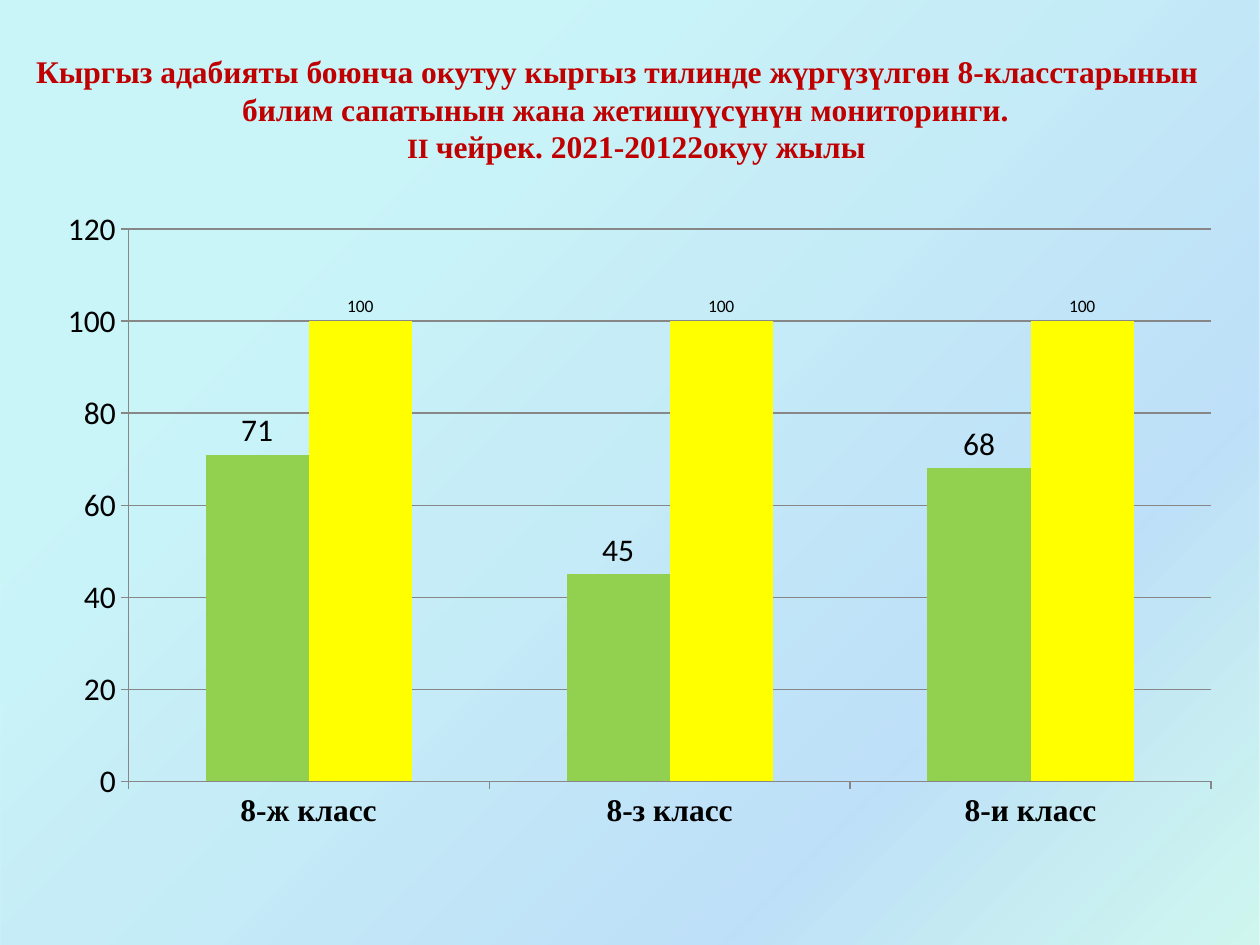
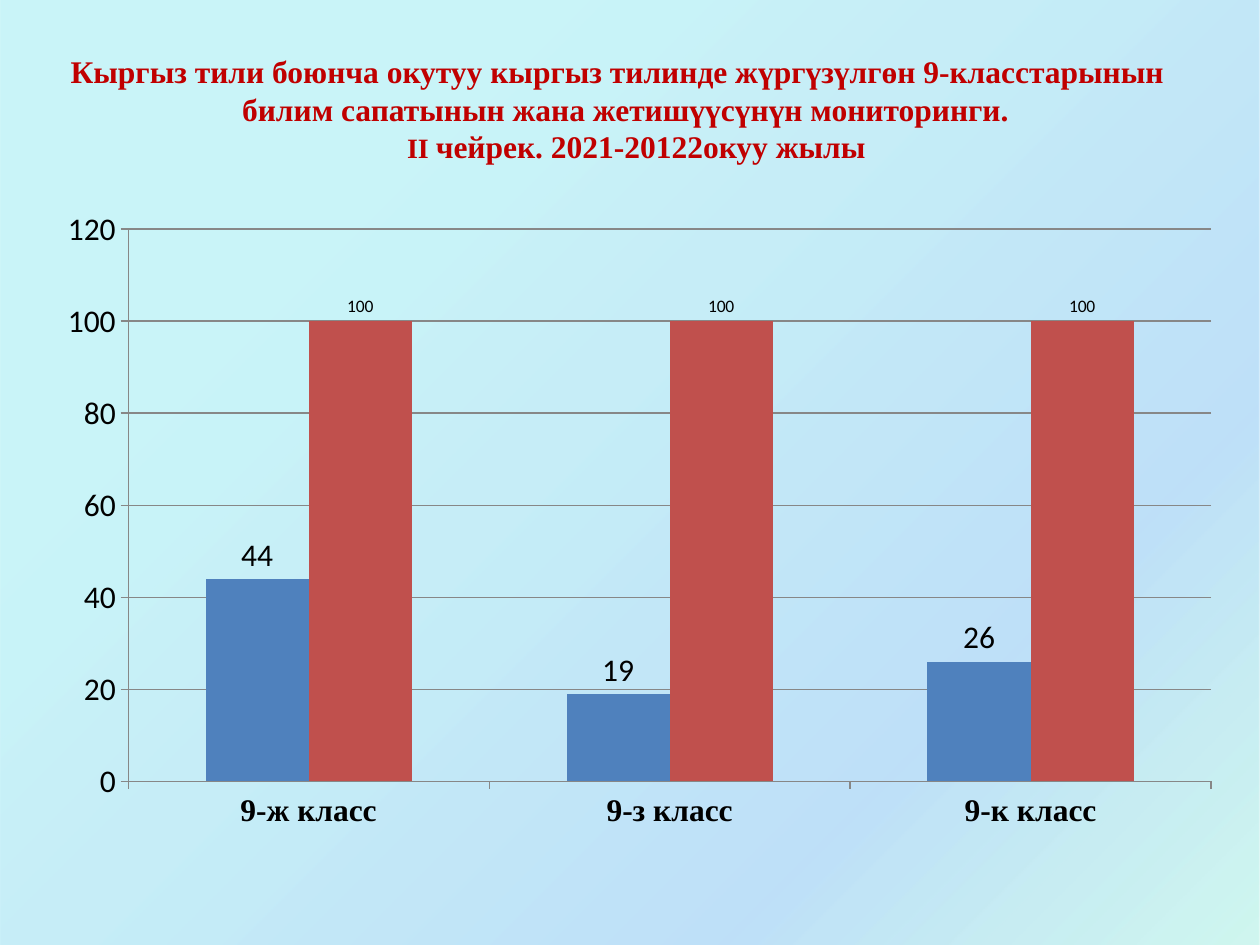
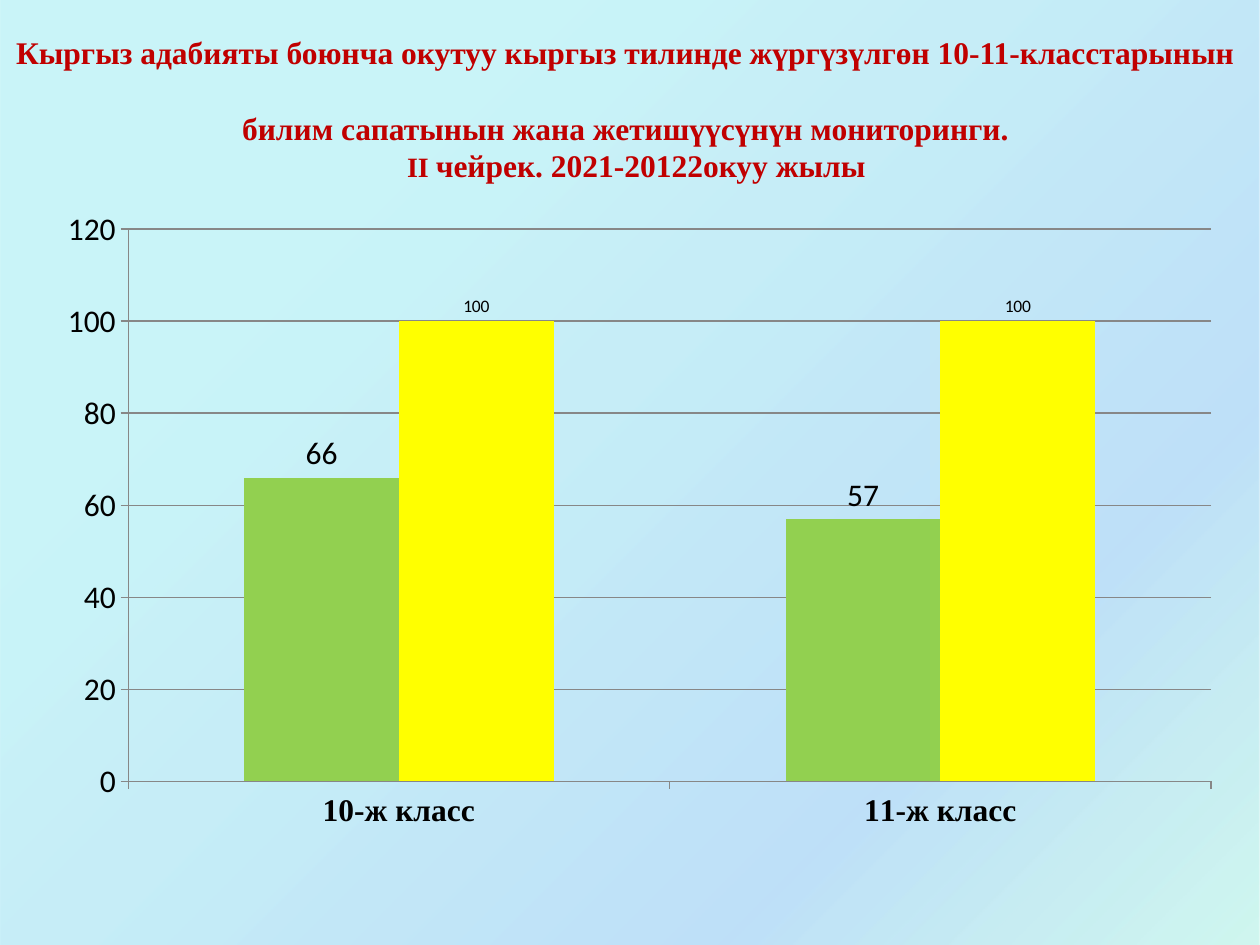
from lxml import etree
from pptx import Presentation
from pptx import util as u
from pptx.chart.data import CategoryChartData
from pptx.dml.color import RGBColor
from pptx.enum import chart as ch, shapes, text
from pptx.oxml import ns

SCALE = 914400 / 126
WIDE, HIGH = 1260, 945
RED = RGBColor(0xC0, 0x00, 0x00)
BLACK = RGBColor(0, 0, 0)
GREY = RGBColor(0x87, 0x87, 0x87)
LIME = RGBColor(0x92, 0xD0, 0x50)
YELLOW = RGBColor(0xFF, 0xFF, 0x00)
BLUE = RGBColor(0x4F, 0x81, 0xBD)
BRICK = RGBColor(0xC0, 0x50, 0x4D)
AQUA = RGBColor(0x21, 0xD6, 0xE0)
SKY = RGBColor(0x00, 0x87, 0xE6)
MINT = RGBColor(0x03, 0xD4, 0xA8)
NAVY = RGBColor(0x00, 0x5C, 0xBF)
WASH = [(25, AQUA, 23), (75, SKY, 25), (100, MINT, 18), (100, NAVY, 26)]
SERIF, SANS = "Times New Roman", "Calibri"

# Subject, classes, right indent and gap below the first line, bar colours, data
SLIDES = [
    ("адабияты", "8", 24, 0, (LIME, YELLOW),
     {"8-ж класс": 71, "8-з класс": 45, "8-и класс": 68}),
    ("тили", "9", 24, 0, (BLUE, BRICK),
     {"9-ж класс": 44, "9-з класс": 19, "9-к класс": 26}),
    ("адабияты", "10-11", 8, 38, (LIME, YELLOW),
     {"10-ж класс": 66, "11-ж класс": 57}),
]


def px(n):
    return u.Emu(round(n * SCALE))


def box(*sides):
    return [px(n) for n in sides]


def add_wash(prs, slide):
    """Lay the pale gradient on the master, behind all else."""
    rect = slide.shapes.add_shape(shapes.MSO_SHAPE.RECTANGLE, *box(0, 0, WIDE, 966))
    rect.shadow.inherit = False
    rect.line.fill.background()
    rect.fill.gradient()
    rect.fill.gradient_angle = 315
    stops = rect._element.spPr.find(".//" + ns.qn("a:gsLst"))
    for old in list(stops):
        stops.remove(old)
    for pos, color, alpha in WASH:
        stop = etree.SubElement(stops, ns.qn("a:gs"), pos=str(pos * 1000))
        tint = etree.SubElement(stop, ns.qn("a:srgbClr"), val=str(color))
        etree.SubElement(tint, ns.qn("a:alpha"), val=str(alpha * 1000))
    prs.slide_master.shapes._spTree.insert(2, rect._element)


def add_line(par, runs, left=0, right=0):
    par.alignment = text.PP_ALIGN.CENTER
    props = par._p.get_or_add_pPr()
    props.set("marL", str(px(left)))
    props.set("marR", str(px(right)))
    for words, size in runs:
        run = par.add_run()
        run.text = words
        font = run.font
        font.name, font.size, font.bold = SERIF, u.Pt(size), True
        font.color.rgb = RED


def add_title(slide, topic, grade, right, gap):
    title = slide.shapes.title
    title.left, title.top, title.width, title.height = box(0, 45, 1259, 127)
    frame = title.text_frame
    frame.word_wrap = True
    frame.auto_size = text.MSO_AUTO_SIZE.SHAPE_TO_FIT_TEXT
    frame.vertical_anchor = text.MSO_ANCHOR.MIDDLE
    first = frame.paragraphs[0]
    head = f"Кыргыз {topic} боюнча окутуу кыргыз тилинде жүргүзүлгөн {grade}-класстарынын"
    add_line(first, [(head, 18)], right=right)
    first.space_after = px(gap)
    add_line(frame.add_paragraph(),
             [("билим сапатынын жана жетишүүсүнүн мониторинги.", 18)], right=8)
    add_line(frame.add_paragraph(),
             [("II ", 16), ("чейрек. 2021-20122окуу жылы", 18)], left=14)


def set_font(font, size, name=SANS, bold=False):
    font.size, font.name, font.bold = u.Pt(size), name, bold
    font.color.rgb = BLACK


def style_axis(axis, name, bold):
    set_font(axis.tick_labels.font, 18, name, bold)
    axis.major_tick_mark = ch.XL_TICK_MARK.OUTSIDE
    axis.format.line.color.rgb = GREY
    axis.format.line.width = u.Pt(0.75)


def add_bars(slide, colors, marks):
    data = CategoryChartData()
    data.categories = list(marks)
    data.add_series("Series 1", list(marks.values()))
    data.add_series("Series 2", [100] * len(marks))
    chart = slide.shapes.add_chart(ch.XL_CHART_TYPE.COLUMN_CLUSTERED,
                                   *box(44, 197, 1191, 644), data).chart
    chart.has_legend = chart.has_title = False
    set_font(chart.font, 18)
    style_axis(chart.category_axis, SERIF, True)
    scale = chart.value_axis
    style_axis(scale, SANS, False)
    scale.minimum_scale, scale.maximum_scale, scale.major_unit = 0, 120, 20
    scale.has_major_gridlines = True
    scale.major_gridlines.format.line.color.rgb = GREY
    plot = chart.plots[0]
    plot.gap_width, plot.overlap, plot.vary_by_categories = 150, 0, False
    for bars, color, size in zip(plot.series, colors, (18, 10)):
        bars.format.fill.solid()
        bars.format.fill.fore_color.rgb = color
        labels = bars.data_labels
        labels.show_value = True
        labels.position = ch.XL_LABEL_POSITION.OUTSIDE_END
        set_font(labels.font, size)


def main():
    prs = Presentation()
    prs.slide_width, prs.slide_height = box(WIDE, HIGH)
    for topic, grade, right, gap, colors, marks in SLIDES:
        slide = prs.slides.add_slide(prs.slide_layouts[5])
        add_title(slide, topic, grade, right, gap)
        add_bars(slide, colors, marks)
    add_wash(prs, prs.slides[0])
    prs.save("out.pptx")


if __name__ == "__main__":
    main()
